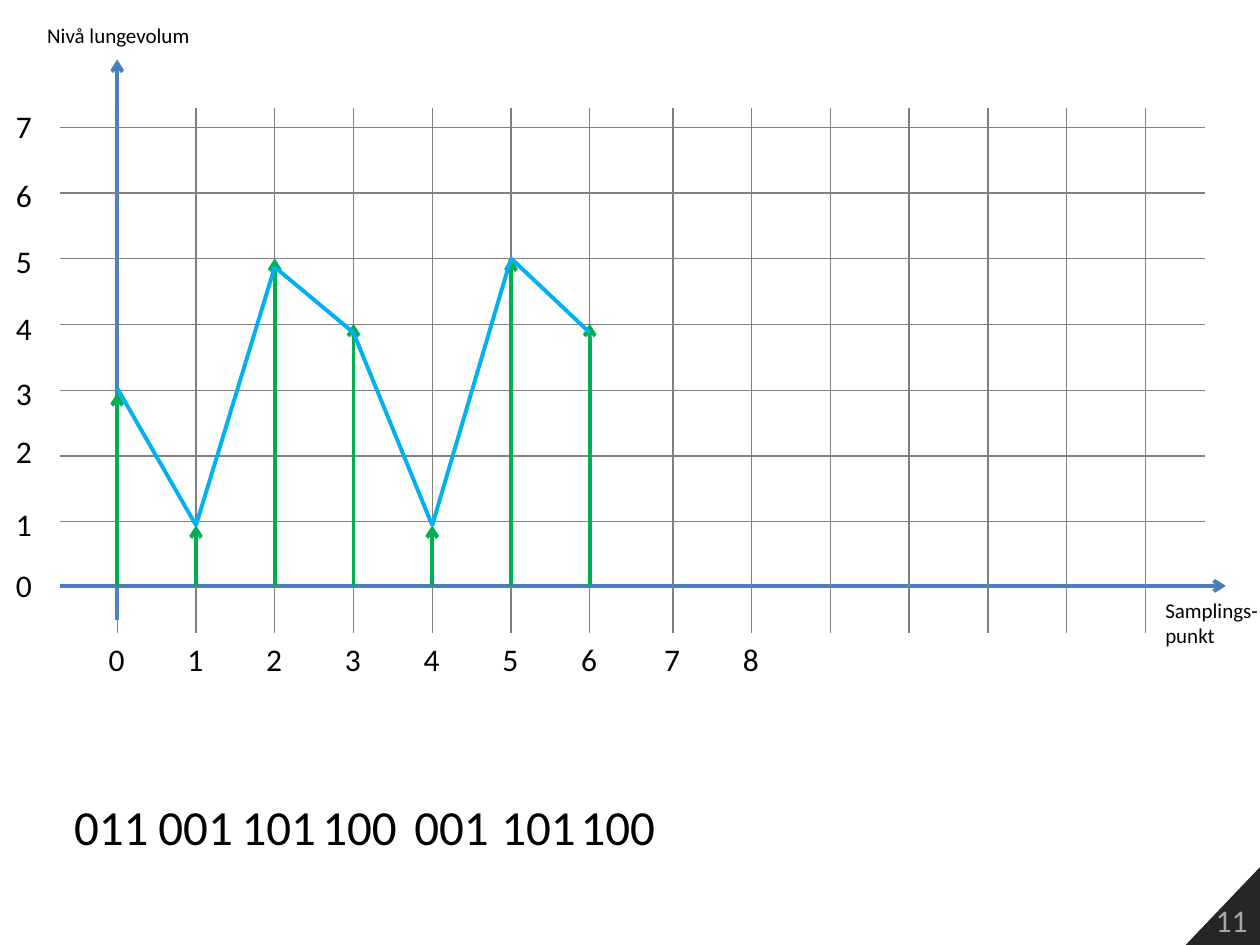
import dataclasses
import itertools

import lxml.etree
import pptx
import pptx.dml.color
import pptx.enum.shapes
import pptx.enum.text
import pptx.oxml.ns
import pptx.util

Pt = pptx.util.Pt
Align = pptx.enum.text.PP_ALIGN


@dataclasses.dataclass(frozen=True)
class Theme:
    font: str = "Calibri"
    ink: str = "000000"
    axis: str = "4B7EBC"
    grid: str = "808080"
    stem: str = "00B050"
    curve: str = "00B0F0"
    corner: str = "262626"
    page: str = "A6A6A6"
    small: float = 12
    body: float = 18
    large: float = 28
    thin: float = 0.75
    thick: float = 2.25


@dataclasses.dataclass(frozen=True)
class Sample:
    tip: float
    node: float
    bits: str
    left: float


THEME = Theme()
WIDTH, HEIGHT = 720, 540
STEP = 45
COLS = [start + STEP * i for start in (67, 384.5) for i in range(7)]
ROWS = [72.7 + 37.57 * i for i in range(7)]
BASE = 334.8
LEVELS = [57.6, 97.2, 134.6, 172.8, 210.2, 243.4, 285.1, 319.7]
SAMPLES = [
    Sample(224.6, 221.8, "011", 35.3),
    Sample(300.2, 300.2, "001", 83.5),
    Sample(147.6, 152.6, "101", 131),
    Sample(185, 190.1, "100", 177.1),
    Sample(300.2, 300.2, "001", 229.7),
    Sample(147.6, 147.6, "101", 279.4),
    Sample(185, 190.1, "100", 324.7),
]


def color(code: str) -> pptx.dml.color.RGBColor:
    return pptx.dml.color.RGBColor.from_string(code)


def draw_line(slide, x1: float, y1: float, x2: float, y2: float,
              tint: str, size: float, arrow: bool = False) -> None:
    line = slide.shapes.add_connector(
        pptx.enum.shapes.MSO_CONNECTOR.STRAIGHT, Pt(x1), Pt(y1), Pt(x2), Pt(y2))
    line.line.color.rgb = color(tint)
    line.line.width = Pt(size)
    qn = pptx.oxml.ns.qn
    if arrow:
        lxml.etree.SubElement(line.line._get_or_add_ln(), qn("a:tailEnd"), type="arrow")
    lxml.etree.SubElement(line._element.spPr, qn("a:effectLst"))


def style(para, size: float, tint: str, align: Align) -> None:
    para.font.name = THEME.font
    para.font.size = Pt(size)
    para.font.color.rgb = color(tint)
    para.alignment = align


def draw_text(slide, text: str, left: float, top: float, width: float,
              height: float, size: float, align: Align = Align.LEFT) -> None:
    box = slide.shapes.add_textbox(Pt(left), Pt(top), Pt(width), Pt(height))
    frame = box.text_frame
    frame.word_wrap = False
    frame.auto_size = pptx.enum.text.MSO_AUTO_SIZE.SHAPE_TO_FIT_TEXT
    frame.text = text
    for para in frame.paragraphs:
        style(para, size, THEME.ink, align)


def draw_corner(slide) -> None:
    shape = slide.shapes.build_freeform(Pt(677.5), Pt(HEIGHT))
    shape.add_line_segments([(Pt(WIDTH), Pt(495.5)), (Pt(WIDTH), Pt(HEIGHT))])
    tab = shape.convert_to_shape()
    tab.shadow.inherit = False
    tab.fill.solid()
    tab.fill.fore_color.rgb = color(THEME.corner)
    tab.line.fill.background()
    frame = tab.text_frame
    frame.text = "11"
    frame.vertical_anchor = pptx.enum.text.MSO_ANCHOR.BOTTOM
    style(frame.paragraphs[0], THEME.body, THEME.page, Align.RIGHT)


def draw_grid(slide) -> None:
    draw_line(slide, 34.5, BASE, 700.5, BASE, THEME.axis, THEME.thick, True)
    draw_line(slide, COLS[0], 354.5, COLS[0], 34, THEME.axis, THEME.thick, True)
    for y in ROWS:
        draw_line(slide, 34.5, y, 688.5, y, THEME.grid, THEME.thin)
    for x in COLS:
        draw_line(slide, x, 62, x, 362, THEME.grid, THEME.thin)


def draw_labels(slide) -> None:
    for level, top in zip(reversed(range(8)), LEVELS):
        draw_text(slide, str(level), 2, top, 23.8, 29, THEME.body)
    for i, x in enumerate(COLS[:9]):
        draw_text(slide, str(i), x - 12, 362.2, 23.8, 29, THEME.body)
    draw_text(slide, "Samplings-\npunkt", 658.8, 337.7, 67.7, 36, THEME.small)
    draw_text(slide, "Nivå lungevolum", 19.4, 9.4, 96.5, 21.6, THEME.small, Align.CENTER)


def draw_data(slide) -> None:
    pairs = list(zip(COLS, SAMPLES))
    for x, item in pairs:
        draw_line(slide, x, BASE, x, item.tip, THEME.stem, THEME.thick, True)
        draw_text(slide, item.bits, item.left, 451.4, 57.6, 41, THEME.large)
    for (x1, one), (x2, two) in itertools.pairwise(pairs):
        draw_line(slide, x1, one.node, x2, two.node, THEME.curve, THEME.thick)


def main() -> None:
    deck = pptx.Presentation()
    deck.slide_width, deck.slide_height = Pt(WIDTH), Pt(HEIGHT)
    slide = deck.slides.add_slide(deck.slide_layouts[6])
    draw_corner(slide)
    draw_grid(slide)
    draw_labels(slide)
    draw_data(slide)
    deck.save("out.pptx")


if __name__ == "__main__":
    main()
